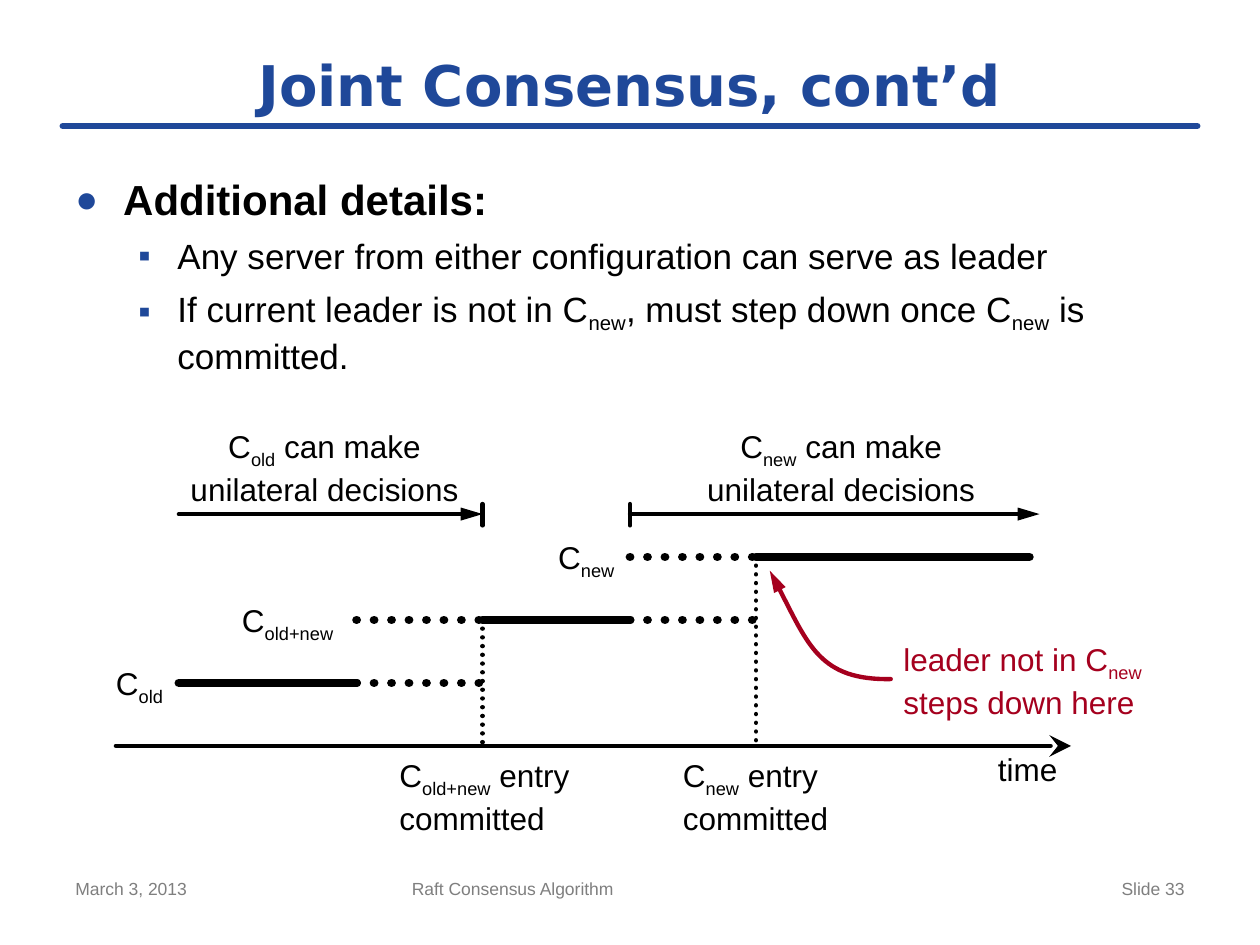
import pptx
import pptx.util
import pptx.dml.color
import pptx.enum.dml
import pptx.enum.shapes
import pptx.enum.text
import pptx.oxml.ns
import lxml.etree

Inches = pptx.util.Inches
Pt = pptx.util.Pt
qn = pptx.oxml.ns.qn
Align = pptx.enum.text.PP_ALIGN
BLUE, BLACK, RED, GRAY = "1F4899", "000000", "A5001E", "7F7F7F"


def paint(color, code):
    color.rgb = pptx.dml.color.RGBColor.from_string(code)


def add_tag(parent, name, **attrs):
    return lxml.etree.SubElement(parent, qn(name), attrs)


def style(par, size, code, bold=False, face="Arial"):
    par.font.name = face
    par.font.size = Pt(size)
    par.font.bold = bold
    paint(par.font.color, code)


def write(par, text):
    """Text between tildes is subscript; a vertical tab breaks the line."""
    for i, piece in enumerate(text.split("~")):
        for j, part in enumerate(piece.split("\v")):
            if j:
                par.add_line_break()
            if part:
                run = par.add_run()
                run.text = part
                if i % 2:
                    run._r.get_or_add_rPr().set("baseline", "-25000")


def add_box(slide, x, y, w, h, inset=True):
    box = slide.shapes.add_textbox(Inches(x), Inches(y), Inches(w), Inches(h))
    frame = box.text_frame
    frame.word_wrap = inset
    if not inset:
        frame.margin_left = frame.margin_right = 0
        frame.margin_top = frame.margin_bottom = 0
    return frame


def add_label(slide, x, y, w, h, text, code=BLACK, align=Align.LEFT):
    frame = add_box(slide, x, y, w, h, inset=False)
    for i, line in enumerate(text.split("\n")):
        par = frame.add_paragraph() if i else frame.paragraphs[0]
        par.alignment = align
        style(par, 18, code)
        write(par, line)


def set_line(shape, width, code, dots=False, head=None, wide="med"):
    shape.line.width = Pt(width)
    paint_line = shape.line.fill
    paint_line.solid()
    paint(paint_line.fore_color, code)
    if dots:
        shape.line.dash_style = pptx.enum.dml.MSO_LINE.ROUND_DOT
    ln = shape.line._get_or_add_ln()
    ln.set("cap", "rnd")
    if head:
        add_tag(ln, "a:tailEnd", type=head, w=wide, len="lg")


def add_line(slide, x1, y1, x2, y2, width=2.5, code=BLACK, **look):
    line = slide.shapes.add_connector(
        pptx.enum.shapes.MSO_CONNECTOR.STRAIGHT,
        Inches(x1), Inches(y1), Inches(x2), Inches(y2))
    set_line(line, width, code, **look)
    add_tag(line._element.spPr, "a:effectLst")


def add_curve(slide, points):
    (x, y), *rest = [(Inches(a), Inches(b)) for a, b in points]
    pen = slide.shapes.build_freeform(x, y)
    pen.add_line_segments(rest, close=False)
    curve = pen.convert_to_shape()
    track = next(curve._element.iter(qn("a:path")))
    bend = add_tag(track, "a:cubicBezTo")
    for step in track.findall(qn("a:lnTo")):
        bend.append(step[0])
        track.remove(step)
    curve.fill.background()
    set_line(curve, 2.5, RED, head="triangle")
    curve.shadow.inherit = False


def add_title(slide, x, y, w, h, text):
    title = slide.shapes.title
    title.left, title.top = Inches(x), Inches(y)
    title.width, title.height = Inches(w), Inches(h)
    title.text_frame.vertical_anchor = pptx.enum.text.MSO_ANCHOR.MIDDLE
    par = title.text_frame.paragraphs[0]
    par.alignment = Align.CENTER
    style(par, 32, BLUE, True, "DejaVu Sans")
    write(par, text)
    add_line(slide, x, y + h, x + w, y + h, 4, BLUE)


def add_body(slide, x, y, w, h, items):
    frame = add_box(slide, x, y, w, h)
    kinds = [(0.38, 0.38, 12, "●", "90000", 24, True),
             (0.81, 0.31, 6, "▪", "100000", 20, False)]
    for i, (level, text) in enumerate(items):
        left, hang, gap, mark, scale, size, bold = kinds[level]
        par = frame.add_paragraph() if i else frame.paragraphs[0]
        par.level = level
        par.space_before = Pt(gap)
        props = par._p.get_or_add_pPr()
        props.set("marL", str(Inches(left)))
        props.set("indent", str(-Inches(hang)))
        add_tag(add_tag(props, "a:buClr"), "a:srgbClr", val=BLUE)
        add_tag(props, "a:buSzPct", val=scale)
        add_tag(props, "a:buFont", typeface="Arial")
        add_tag(props, "a:buChar", char=mark)
        style(par, size, BLACK, bold)
        write(par, text)


def add_chart(slide, x, y):
    start, joint, mid, new, last, end = [
        x + d for d in (0.92, 2.33, 3.33, 4.5, 5.5, 7.67)]
    span = y + 0.75
    top, row, low, axis = [y + 1.09 + 0.5 * i for i in range(4)]

    add_line(slide, x + 0.42, axis, x + 8, axis, head="stealth", wide="lg")
    add_label(slide, x + 7.42, axis + 0.03, 0.48, 0.3, "time")
    for left, wide, name in ((2.67, 1.44, "old+new"), (4.92, 1.16, "new")):
        add_label(slide, x + left, axis + 0.08, wide, 0.61,
                  f"C~{name}~ entry\vcommitted")
    for at, high in ((mid, row), (last, top)):
        add_line(slide, at, high, at, axis, dots=True)

    for left, wide, high, name in ((0.42, 0.4, low, "old"),
                                   (1.42, 0.81, row, "old+new"),
                                   (3.93, 0.49, top, "new")):
        add_label(slide, x + left, high - 0.15, wide, 0.3, f"C~{name}~")
    for left, right, high, dots in (
            (start, joint, low, False), (joint, mid, low, True),
            (joint, mid, row, True), (mid, new, row, False),
            (new, last, row, True), (new, last, top, True),
            (last, end, top, False)):
        add_line(slide, left, high, right, high, 5, dots=dots)

    for left, right, stop, text, name in (
            (start, mid, mid, x + 1, "old"),
            (new, end + 0.08, new, x + 5.1, "new")):
        add_line(slide, left, span, right, span, head="triangle")
        add_line(slide, stop, span - 0.08, stop, span + 0.09)
        add_label(slide, text, y + 0.06, 2.15, 0.61,
                  f"C~{name}~ can make\nunilateral decisions",
                  align=Align.CENTER)

    add_label(slide, x + 6.67, y + 1.75, 1.95, 0.61,
              "leader not in C~new~\vsteps down here", RED)
    bends = ((6.57, 2.06), (6.01, 2.07), (5.89, 1.73), (5.61, 1.2))
    add_curve(slide, [(x + a, y + b) for a, b in bends])


def add_foot(slide, x, y, h):
    for left, wide, text, align in (
            (0, 2.33, "March 3, 2013", Align.LEFT),
            (2.67, 3.75, "Raft Consensus Algorithm", Align.LEFT),
            (6.67, 2.33, "Slide 33", Align.RIGHT)):
        par = add_box(slide, x + left, y, wide, h).paragraphs[0]
        par.alignment = align
        style(par, 10, GRAY)
        write(par, text)


def main():
    deck = pptx.Presentation()
    deck.slide_width, deck.slide_height = Inches(10), Inches(7.5)
    slide = deck.slides.add_slide(deck.slide_layouts[5])
    add_title(slide, 0.5, 0.33, 9, 0.67, "Joint Consensus, cont’d")
    add_body(slide, 0.5, 1.33, 9, 1.8, [
        (0, "Additional details:"),
        (1, "Any server from either configuration can serve as leader"),
        (1, "If current leader is not in C~new~, must step down once "
            "C~new~ is committed.")])
    add_chart(slide, 0.5, 3.33)
    add_foot(slide, 0.5, 6.92, 0.43)
    deck.save("out.pptx")


if __name__ == "__main__":
    main()
